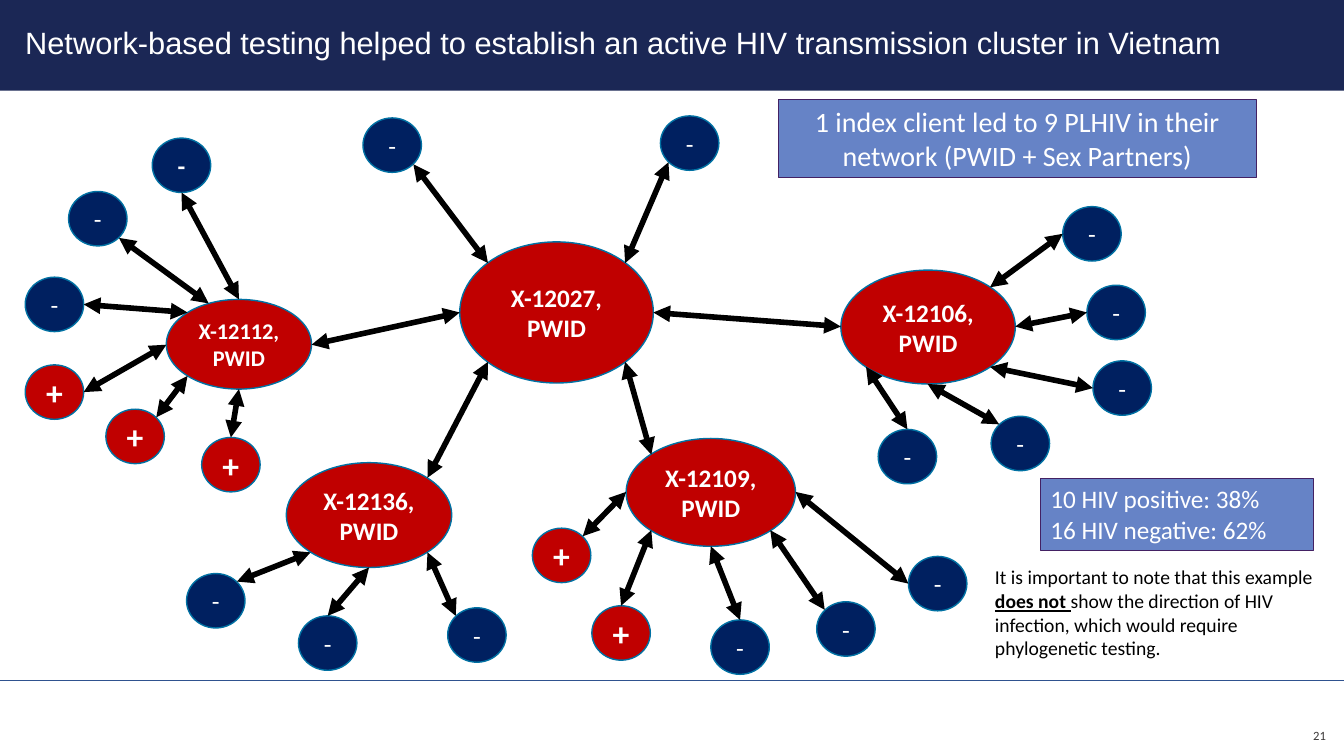
"""Build the slide on an HIV transmission cluster found by network-based testing."""
from math import cos, radians, sin

from lxml import etree
from pptx import Presentation
from pptx import util as u
from pptx.dml.color import RGBColor
from pptx.enum import shapes, text
from pptx.oxml import ns

PX = 9144
SLIDE_W, SLIDE_H = 1333, 750
CONTACT_W, CONTACT_H = 58, 54
E, NE, N, NW, W, SW, S, SE = range(0, 360, 45)

THEME = {
    "heading_font": "Arial", "body_font": "Calibri",
    "banner": "1B2755", "rule": "2F528F", "number": "3B3838",
    "-": "002060", "+": "C00000", "outline": "0071A3",
    "callout": "6683C6", "callout_line": "432163",
    "light": "FFFFFF", "dark": "000000",
    "title_size": 22, "finding_size": 20, "totals_size": 18, "note_size": 14,
    "number_size": 9, "-_size": 18, "+_size": 24, "arrow_width": 4,
}

TITLE = "Network-based testing helped to establish an active HIV transmission cluster in Vietnam"
FINDING = "1 index client led to 9 PLHIV in their network (PWID + Sex Partners)"
TOTALS = "10 HIV positive: 38%\n16 HIV negative: 62%"
NOTE = [("It is important to note that this example ", False),
        ("does not ", True),
        ("show the direction of HIV infection, which would require phylogenetic testing.", False)]
PAGE = "21"

# client: box, type size
CLIENTS = {
    "X-12027": ((456, 240, 192, 140), 18),
    "X-12106": ((834, 268, 173, 113), 18),
    "X-12109": ((621, 435, 168, 107), 18),
    "X-12136": ((284, 459, 164, 104), 18),
    "X-12112": ((165, 297, 144, 89), 16),
}
# client: (result, left, top, angle on client, angle on contact, bold)
CONTACTS = {
    "X-12027": [("-", 360, 117, NW, SE, False), ("-", 655, 115, NE, SW, False)],
    "X-12112": [("-", 151, 137, N, S, True), ("-", 68, 190, 115, SE, False),
                ("-", 25, 275, NW, E, False), ("+", 25, 362, W, E, True),
                ("+", 105, 406, SW, NE, True), ("+", 200, 434, S, N, True)],
    "X-12106": [("-", 1054, 205, NE, W, False), ("-", 1078, 283, E, W, False),
                ("-", 1084, 358, SE, W, False), ("-", 983, 413, S, NW, False),
                ("-", 871, 426, SW, N, False)],
    "X-12136": [("-", 185, 569, SW, NE, False), ("-", 296, 611, S, N, False),
                ("-", 444, 603, SE, NW, False)],
    "X-12109": [("+", 528, 524, W, NE, True), ("+", 587, 601, SW, N, True),
                ("-", 705, 615, S, N, False), ("-", 810, 597, SE, NW, False),
                ("-", 901, 552, E, W, False)],
}
CLIENT_LINKS = [("X-12027", W, "X-12112", E), ("X-12027", SW, "X-12136", NE),
                ("X-12027", SE, "X-12109", NW), ("X-12027", E, "X-12106", W)]


def color(name):
    return RGBColor.from_string(THEME[name])


def emu(box):
    return [u.Emu(length * PX) for length in box]


def rim(box, angle):
    """Return the point of an ellipse at an angle."""
    left, top, width, height = box
    return (round(left + width / 2 * (1 + cos(radians(angle)))),
            round(top + height / 2 * (1 - sin(radians(angle)))))


def style(run, size, ink="light", font="body_font", bold=False):
    run.font.size = u.Pt(size)
    run.font.name = THEME[font]
    run.font.color.rgb = color(ink)
    run.font.bold = bold


def write(shape, words, size, align=text.PP_ALIGN.LEFT, anchor=text.MSO_ANCHOR.TOP, **look):
    frame = shape.text_frame
    frame.word_wrap = True
    frame.vertical_anchor = anchor
    frame.text = words
    for paragraph in frame.paragraphs:
        paragraph.alignment = align
        for run in paragraph.runs:
            style(run, size, **look)
    return frame


def add_block(slide, kind, box, fill, outline=None):
    block = slide.shapes.add_shape(kind, *emu(box))
    block.shadow.inherit = False
    block.fill.solid()
    block.fill.fore_color.rgb = color(fill)
    if outline:
        block.line.color.rgb = color(outline)
        block.line.width = u.Pt(1)
    else:
        block.line.fill.background()
    return block


def add_person(slide, box, result, words, size, bold):
    person = add_block(slide, shapes.MSO_SHAPE.OVAL, box, result, "outline")
    write(person, words, size, text.PP_ALIGN.CENTER, text.MSO_ANCHOR.MIDDLE, bold=bold)


def add_line(slide, start, end, ink, width, arrows=False):
    line = slide.shapes.add_connector(shapes.MSO_CONNECTOR.STRAIGHT, *emu(start + end))
    line.line.color.rgb = color(ink)
    line.line.width = u.Pt(width)
    etree.SubElement(line._element.spPr, ns.qn("a:effectLst"))
    if arrows:
        for tip in ("a:headEnd", "a:tailEnd"):
            etree.SubElement(line.line._get_or_add_ln(), ns.qn(tip), type="triangle")


def add_frame(slide):
    add_block(slide, shapes.MSO_SHAPE.RECTANGLE, (0, 0, SLIDE_W, 90), "banner")
    add_line(slide, (0, 675), (SLIDE_W, 675), "rule", 0.5)
    number = slide.shapes.add_textbox(*emu((1261, 710, 64, 40)))
    write(number, PAGE, THEME["number_size"], text.PP_ALIGN.RIGHT,
          text.MSO_ANCHOR.MIDDLE, ink="number")
    title = slide.shapes.add_textbox(*emu((25, 24, 1279, 37)))
    frame = write(title, TITLE, THEME["title_size"], font="heading_font")
    frame.margin_left = frame.margin_top = frame.margin_right = frame.margin_bottom = 0


def add_network(slide):
    links = [(rim(CLIENTS[a][0], a_angle), rim(CLIENTS[b][0], b_angle))
             for a, a_angle, b, b_angle in CLIENT_LINKS]
    for client, (client_box, size) in CLIENTS.items():
        add_person(slide, client_box, "+", f"{client}, PWID", size, True)
        for result, left, top, client_angle, contact_angle, bold in CONTACTS[client]:
            contact_box = (left, top, CONTACT_W, CONTACT_H)
            add_person(slide, contact_box, result, result, THEME[f"{result}_size"], bold)
            links.append((rim(client_box, client_angle), rim(contact_box, contact_angle)))
    for start, end in links:
        add_line(slide, start, end, "dark", THEME["arrow_width"], arrows=True)


def add_messages(slide):
    for words, box, size, align in (
            (FINDING, (772, 99, 474, 77), "finding_size", text.PP_ALIGN.CENTER),
            (TOTALS, (1032, 475, 271, 71), "totals_size", text.PP_ALIGN.LEFT)):
        callout = add_block(slide, shapes.MSO_SHAPE.RECTANGLE, box, "callout", "callout_line")
        write(callout, words, THEME[size], align)
    note = slide.shapes.add_textbox(*emu((977, 556, 349, 104))).text_frame
    note.word_wrap = True
    for words, stressed in NOTE:
        run = note.paragraphs[0].add_run()
        run.text = words
        style(run, THEME["note_size"], "dark", bold=stressed)
        run.font.underline = stressed


def main():
    deck = Presentation()
    deck.slide_width, deck.slide_height = emu((SLIDE_W, SLIDE_H))
    slide = deck.slides.add_slide(deck.slide_layouts[6])
    add_frame(slide)
    add_network(slide)
    add_messages(slide)
    deck.save("out.pptx")


if __name__ == "__main__":
    main()
